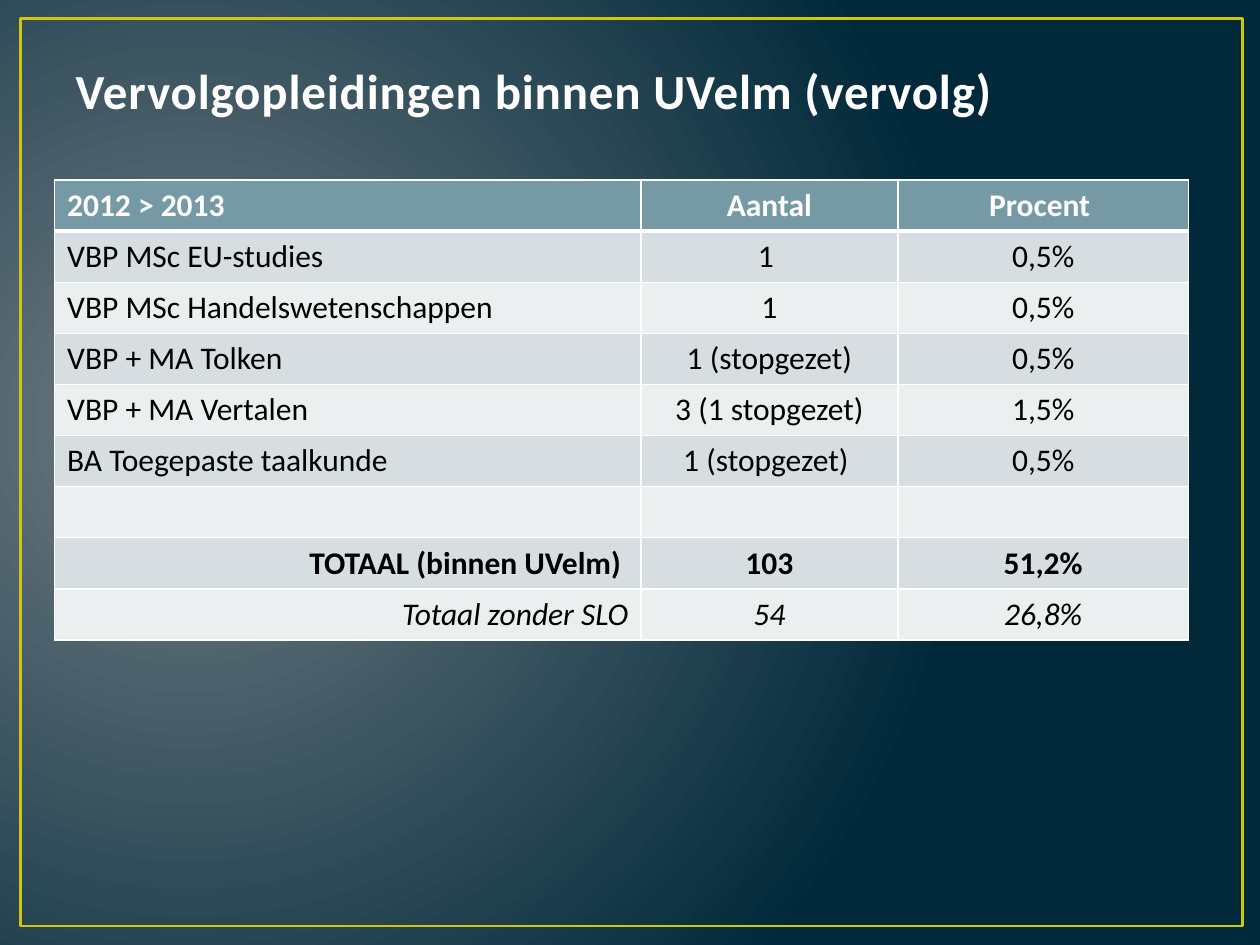
from dataclasses import dataclass

from lxml.etree import SubElement
from pptx import Presentation
from pptx.dml.color import RGBColor
from pptx.enum.shapes import MSO_SHAPE
from pptx.enum.text import MSO_ANCHOR, PP_ALIGN
from pptx.oxml import parse_xml
from pptx.oxml.ns import nsdecls, qn
from pptx.util import Cm, Pt


@dataclass(frozen=True)
class Theme:
    font: str = "Calibri"
    title_size: int = 28
    table_size: int = 18
    title: str = "FEFEFE"
    frame: str = "CFC60D"
    glow: str = "717C84"
    night: str = "01293A"
    header: str = "759AA5"
    bands: tuple = ("D6DEE1", "ECEFF0")
    white: str = "FFFFFF"
    black: str = "000000"


theme = Theme()


def style_paragraph(paragraph, size, color, bold=False, italic=False):
    font = paragraph.font
    font.name, font.size = theme.font, Pt(size)
    font.bold, font.italic = bold, italic
    font.color.rgb = RGBColor.from_string(color)


def add_border(cell, side, width):
    properties = cell._tc.get_or_add_tcPr()
    line = SubElement(properties, qn(f"a:ln{side}"), w=str(Pt(width)))
    fill = SubElement(line, qn("a:solidFill"))
    SubElement(fill, qn("a:srgbClr"), val=theme.white)


presentation = Presentation()
presentation.slide_width, presentation.slide_height = Cm(25.4), Cm(19.05)
slide = presentation.slides.add_slide(presentation.slide_layouts[5])

# Background: circular glow from the left
background = slide.background.fill
background.gradient()
for stop, color in zip(background.gradient_stops, (theme.glow, theme.night)):
    stop.color.rgb = RGBColor.from_string(color)
linear = next(slide.element.iter(qn("a:lin")))
linear.getparent().replace(linear, parse_xml(
    f'<a:path {nsdecls("a")} path="circle">'
    '<a:fillToRect l="15000" t="50000" r="85000" b="60000"/></a:path>'))

# Frame
frame = slide.shapes.add_shape(MSO_SHAPE.RECTANGLE, Cm(0.41), Cm(0.38), Cm(24.64), Cm(18.29))
frame.shadow.inherit = False
frame.fill.background()
frame.line.color.rgb = RGBColor.from_string(theme.frame)
frame.line.width = Pt(1.5)

# Title
title = slide.shapes.title
title.left, title.top, title.width, title.height = Cm(1.27), Cm(0.78), Cm(22.86), Cm(1.75)
title.text_frame.text = "Vervolgopleidingen binnen UVelm (vervolg)"
title.text_frame.vertical_anchor = MSO_ANCHOR.BOTTOM
paragraph = title.text_frame.paragraphs[0]
paragraph.alignment = PP_ALIGN.LEFT
style_paragraph(paragraph, theme.title_size, theme.title, bold=True)
paragraph.runs[0]._r.get_or_add_rPr().set("spc", "50")

# Table
rows = [
    ("2012 > 2013", "Aantal", "Procent "),
    ("VBP MSc EU-studies", "1 ", "0,5%"),
    ("VBP MSc Handelswetenschappen", "1", "0,5%"),
    ("VBP + MA Tolken", "1 (stopgezet)", "0,5%"),
    ("VBP + MA Vertalen", "3 (1 stopgezet)", "1,5%"),
    ("BA Toegepaste taalkunde", "1 (stopgezet) ", "0,5%"),
    ("", "", ""),
    ("TOTAAL (binnen UVelm) ", "103", "51,2%"),
    ("Totaal zonder SLO", "54", "26,8%"),
]
column_widths = (11.82, 5.18, 5.86)
row_height = 1.03
total_row, subtotal_row = len(rows) - 2, len(rows) - 1

table = slide.shapes.add_table(
    len(rows), len(column_widths), Cm(1.1), Cm(3.63),
    Cm(sum(column_widths)), Cm(row_height * len(rows))).table
table.first_row = table.horz_banding = False
for column, width in zip(table.columns, column_widths):
    column.width = Cm(width)

for row_index, texts in enumerate(rows):
    table.rows[row_index].height = Cm(row_height)
    is_header = row_index == 0
    fill_color = theme.header if is_header else theme.bands[(row_index - 1) % 2]
    for column_index, text in enumerate(texts):
        cell = table.cell(row_index, column_index)
        cell.text = text
        paragraph = cell.text_frame.paragraphs[0]
        if column_index:
            paragraph.alignment = PP_ALIGN.CENTER
        elif row_index >= total_row:
            paragraph.alignment = PP_ALIGN.RIGHT
        style_paragraph(paragraph, theme.table_size,
                        theme.white if is_header else theme.black,
                        bold=row_index in (0, total_row),
                        italic=row_index == subtotal_row)
        # Borders come before the fill; a thick rule closes the header
        for side in "LRTB":
            thick = (side, row_index) in (("B", 0), ("T", 1))
            add_border(cell, side, 3 if thick else 1)
        cell.fill.solid()
        cell.fill.fore_color.rgb = RGBColor.from_string(fill_color)

presentation.save("out.pptx")
